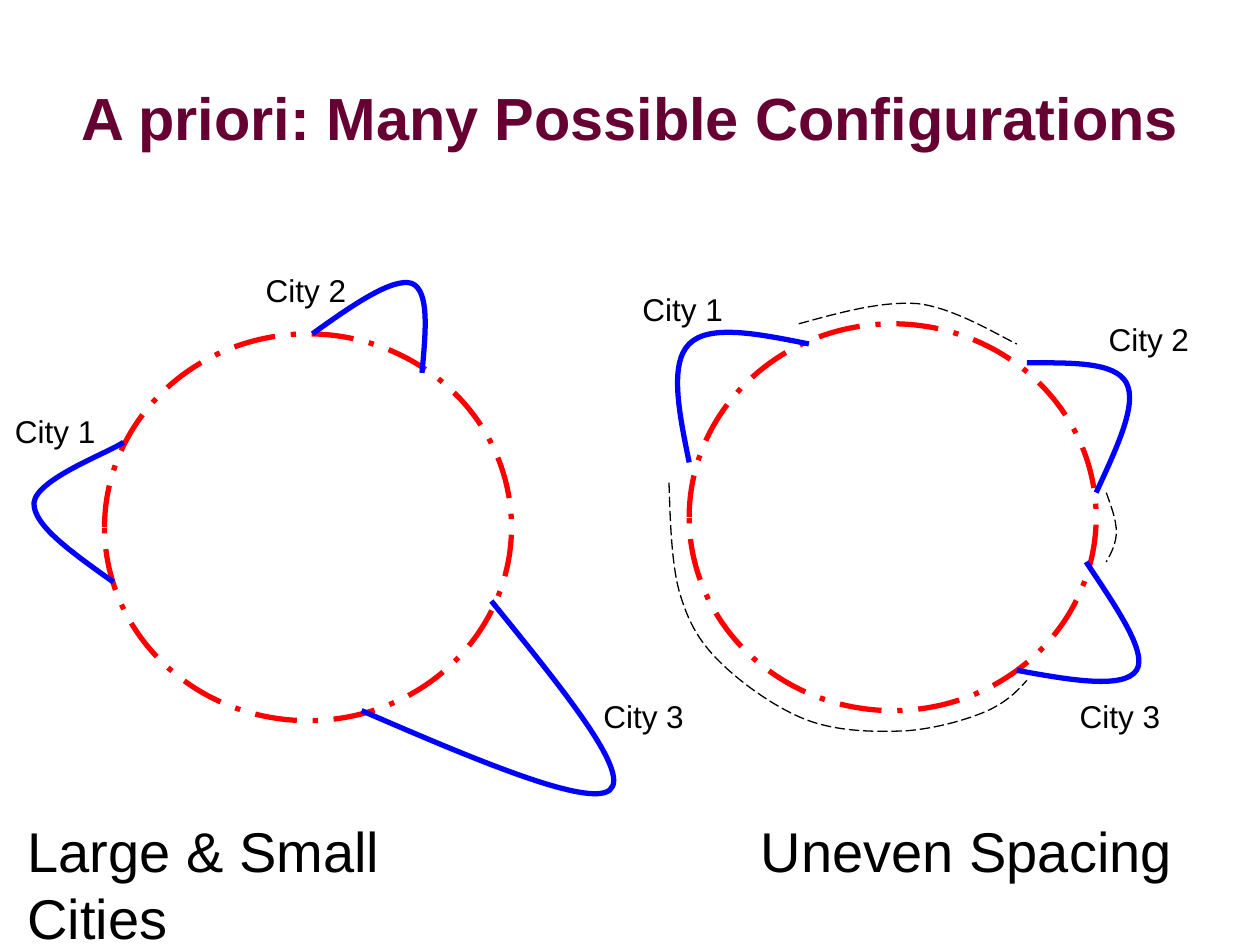
from lxml.etree import SubElement
from pptx import Presentation
from pptx.dml.color import RGBColor
from pptx.enum.dml import MSO_LINE as Dash
from pptx.enum.shapes import MSO_SHAPE as Preset
from pptx.enum.text import MSO_ANCHOR as Anchor, PP_ALIGN as Align
from pptx.oxml.ns import qn
from pptx.util import Inches, Pt

WINE = RGBColor(0x66, 0x00, 0x33)
BLACK = RGBColor(0, 0, 0)
RED = RGBColor(0xFF, 0, 0)
BLUE = RGBColor(0, 0, 0xFF)
WHITE = RGBColor(0xFF, 0xFF, 0xFF)

TITLE = "A priori: Many Possible Configurations"
RING_SIZE = (3.23, 3.07)
RINGS = [((0.83, 2.65), None), ((5.47, 2.57), WHITE)]

# Each curve: a start point, then three points per Bezier segment
CITIES = [
    [(5.47, 3.67), (5.39, 3.28), (5.31, 2.89), (5.47, 2.73),
     (5.63, 2.57), (6.02, 2.65), (6.42, 2.73)],
    [(8.15, 2.88), (8.5, 2.88), (8.85, 2.87), (8.94, 3.04),
     (9.03, 3.21), (8.86, 3.56), (8.7, 3.91)],
    [(8.62, 4.46), (8.86, 4.82), (9.11, 5.18), (9.02, 5.32),
     (8.92, 5.47), (8.5, 5.4), (8.07, 5.32)],
    [(3.9, 4.77), (4.45, 5.45), (5.01, 6.13), (4.84, 6.27),
     (4.67, 6.41), (3.77, 6.03), (2.87, 5.64)],
    [(0.9, 4.62), (0.58, 4.39), (0.26, 4.17), (0.27, 3.99),
     (0.29, 3.8), (0.87, 3.59), (0.98, 3.51)],
    [(2.48, 2.65), (2.8, 2.42), (3.12, 2.2), (3.27, 2.25),
     (3.41, 2.31), (3.38, 2.63), (3.35, 2.96)],
]
GAPS = [
    [(6.34, 2.57), (6.67, 2.48), (6.99, 2.39), (7.28, 2.41),
     (7.57, 2.44), (7.94, 2.67), (8.07, 2.73)],
    [(8.78, 3.91), (8.82, 4.02), (8.86, 4.13), (8.86, 4.22),
     (8.86, 4.31), (8.82, 4.39), (8.78, 4.46)],
    [(5.31, 3.83), (5.32, 4.14), (5.33, 4.46), (5.39, 4.69),
     (5.46, 4.93), (5.54, 5.08), (5.71, 5.25),
     (5.88, 5.42), (6.17, 5.63), (6.42, 5.72),
     (6.67, 5.81), (6.97, 5.81), (7.2, 5.8),
     (7.44, 5.78), (7.68, 5.71), (7.84, 5.64),
     (7.99, 5.57), (8.07, 5.49), (8.15, 5.4)],
]
CAPTIONS = [("Large & Small Cities", 0.12, 4.1), ("Uneven Spacing", 5.94, 3.62)]
LABELS = [
    ("City 1", 0.02, 3.22), ("City 2", 2.01, 2.1), ("City 3", 4.69, 5.48),
    ("City 1", 5, 2.25), ("City 2", 8.7, 2.49), ("City 3", 8.47, 5.48),
]

deck = Presentation()
deck.slide_width, deck.slide_height = Inches(10), Inches(7.5)
shapes = deck.slides.add_slide(deck.slide_layouts[6]).shapes


def add_text(text, box, size, color=BLACK, bold=False, wrap=True):
    frame = shapes.add_textbox(*map(Inches, box)).text_frame
    frame.word_wrap = wrap
    run = frame.paragraphs[0].add_run()
    run.text = text
    font = run.font
    font.name, font.size, font.bold = "Arial", Pt(size), bold
    font.color.rgb = color
    return frame


def style(shape, color, width, dash=None, fill=None):
    shape.shadow.inherit = False
    if fill is None:
        shape.fill.background()
    else:
        shape.fill.solid()
        shape.fill.fore_color.rgb = fill
    shape.line.color.rgb = color
    shape.line.width = Pt(width)
    if dash is not None:
        shape.line.dash_style = dash


def add_curve(points):
    """Draw a polyline through all points, then turn each three into a Bezier."""
    spots = [(Inches(x), Inches(y)) for x, y in points]
    pen = shapes.build_freeform(*spots[0])
    pen.add_line_segments(spots[1:], close=False)
    shape = pen.convert_to_shape()
    route = next(shape.element.iter(qn("a:path")))
    lines = route.findall(qn("a:lnTo"))
    for i in range(0, len(lines), 3):
        bend = SubElement(route, qn("a:cubicBezTo"))
        for line in lines[i:i + 3]:
            bend.append(line[0])
            route.remove(line)
    return shape


title = add_text(TITLE, (0.5, 0.3, 9, 1.25), 34, WINE, bold=True)
title.vertical_anchor = Anchor.MIDDLE
title.paragraphs[0].alignment = Align.CENTER

for spot, fill in RINGS:
    ring = shapes.add_shape(Preset.OVAL, *map(Inches, spot + RING_SIZE))
    style(ring, RED, 3, Dash.LONG_DASH_DOT, fill)
for points in CITIES:
    style(add_curve(points), BLUE, 3)
for points in GAPS:
    style(add_curve(points), BLACK, 0.75, Dash.LONG_DASH)

for text, left, width in CAPTIONS:
    add_text(text, (left, 6.43, width, 0.63), 32)
for text, left, top in LABELS:
    add_text(text, (left, top, 0.84, 0.4), 18, wrap=False)

deck.save("out.pptx")
